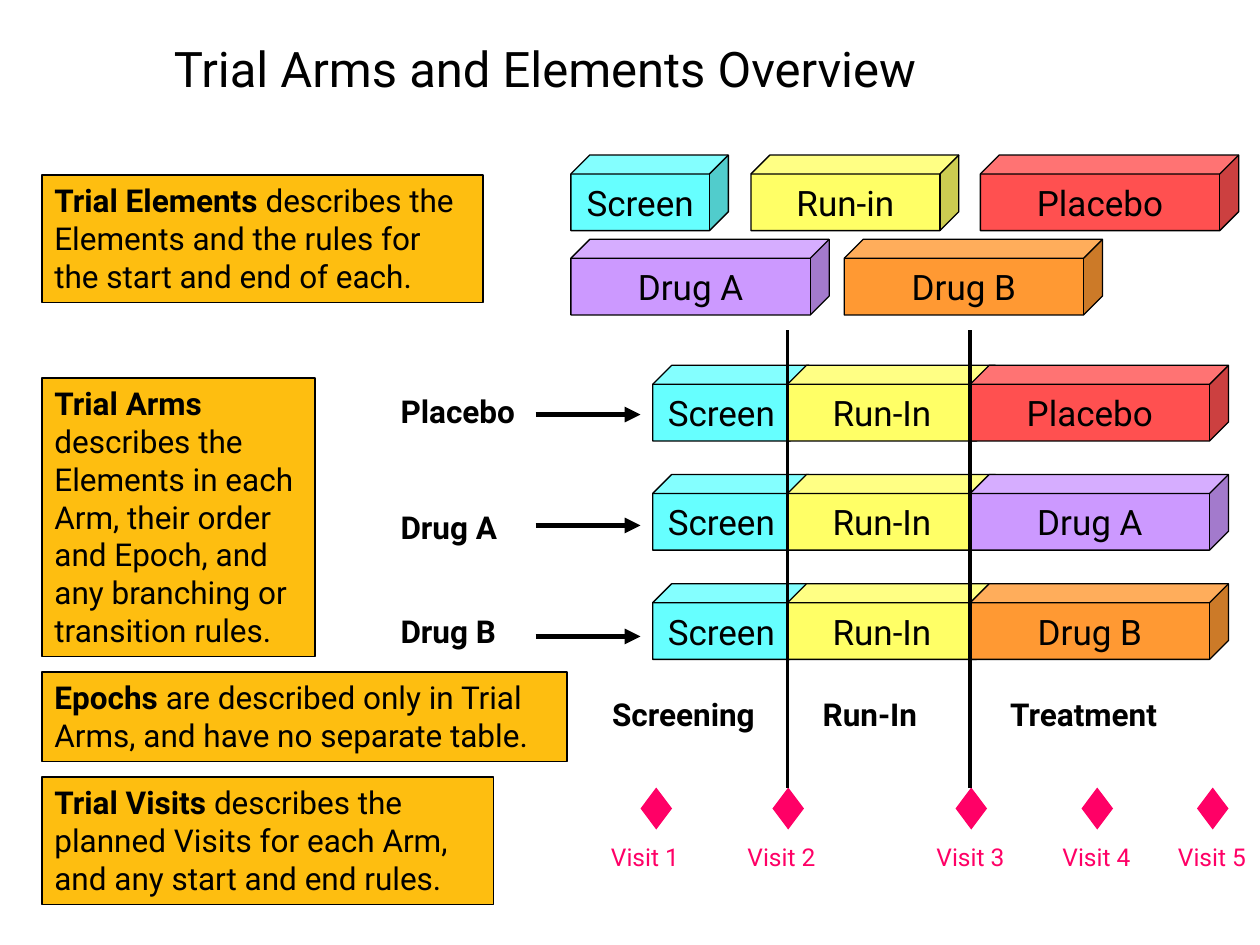
"""Builds the Trial Arms and Elements Overview slide."""
from lxml import etree
from pptx import Presentation
from pptx.dml.color import RGBColor
from pptx.enum import shapes, text
from pptx.oxml import ns
from pptx.util import Pt

BLACK = RGBColor(0x00, 0x00, 0x00)
AMBER = RGBColor(0xFE, 0xBE, 0x10)
CYAN = RGBColor(0x66, 0xFF, 0xFF)
YELLOW = RGBColor(0xFF, 0xFF, 0x66)
RED = RGBColor(0xFF, 0x50, 0x50)
PURPLE = RGBColor(0xCC, 0x99, 0xFF)
ORANGE = RGBColor(0xFF, 0x99, 0x33)
PINK = RGBColor(0xFF, 0x00, 0x66)


class Board:
    font = "Roboto"
    outline = 0.75

    def __init__(self, slide):
        self.slide = slide

    def style(self, run, size, color=BLACK, bold=False):
        run.font.name = self.font
        run.font.size = Pt(size)
        run.font.bold = bold
        run.font.color.rgb = color

    def title(self, wording, left, top, width, height):
        heading = self.slide.shapes.title
        heading.left, heading.top = Pt(left), Pt(top)
        heading.width, heading.height = Pt(width), Pt(height)
        frame = heading.text_frame
        frame.text = wording
        frame.auto_size = text.MSO_AUTO_SIZE.NONE
        frame.vertical_anchor = text.MSO_ANCHOR.MIDDLE
        frame.margin_left = frame.margin_right = 0
        frame.margin_top = frame.margin_bottom = 0
        frame.paragraphs[0].alignment = text.PP_ALIGN.LEFT
        self.style(frame.paragraphs[0].runs[0], 28)

    def solid(self, preset, left, top, width, height, fill, outlined=True):
        solid = self.slide.shapes.add_shape(
            preset, Pt(left), Pt(top), Pt(width), Pt(height))
        solid.shadow.inherit = False
        solid.fill.solid()
        solid.fill.fore_color.rgb = fill
        if outlined:
            solid.line.color.rgb = BLACK
            solid.line.width = Pt(self.outline)
        else:
            solid.line.fill.background()
        return solid

    def element(self, name, left, top, width, fill):
        cube = self.solid(shapes.MSO_SHAPE.CUBE, left, top, width, 43.2, fill)
        frame = cube.text_frame
        frame.text = name
        frame.word_wrap = False
        frame.vertical_anchor = text.MSO_ANCHOR.MIDDLE
        frame.paragraphs[0].alignment = text.PP_ALIGN.CENTER
        self.style(frame.paragraphs[0].runs[0], 20)

    def note(self, term, description, top, width, height):
        note = self.solid(shapes.MSO_SHAPE.RECTANGLE, 24, top, width, height, AMBER)
        frame = note.text_frame
        frame.word_wrap = True
        frame.vertical_anchor = text.MSO_ANCHOR.TOP
        paragraph = frame.paragraphs[0]
        paragraph.alignment = text.PP_ALIGN.LEFT
        for wording, bold in ((term, True), (description, False)):
            run = paragraph.add_run()
            run.text = wording
            self.style(run, 18, bold=bold)

    def label(self, wording, left, top, width, height=28.8, size=18,
              color=BLACK, bold=True):
        label = self.slide.shapes.add_textbox(
            Pt(left), Pt(top), Pt(width), Pt(height))
        frame = label.text_frame
        frame.text = wording
        frame.word_wrap = True
        self.style(frame.paragraphs[0].runs[0], size, color, bold)

    def line(self, x1, y1, x2, y2, weight, arrow=False):
        line = self.slide.shapes.add_connector(
            shapes.MSO_CONNECTOR.STRAIGHT, Pt(x1), Pt(y1), Pt(x2), Pt(y2))
        line.line.color.rgb = BLACK
        line.line.width = Pt(weight)
        if arrow:
            etree.SubElement(line.line._get_or_add_ln(), ns.qn("a:tailEnd"),
                             type="triangle")
        etree.SubElement(line._element.spPr, ns.qn("a:effectLst"))


def main():
    deck = Presentation()
    deck.slide_width, deck.slide_height = Pt(720), Pt(540)
    board = Board(deck.slides.add_slide(deck.slide_layouts[5]))
    board.title("Trial Arms and Elements Overview", 99.4, 23, 597, 32)

    for term, description, top, width, height in (
        ("Trial Elements ", "describes the Elements and the rules for "
         "the start and end of each.", 100, 252, 72.7),
        ("Trial Arms ", "describes the Elements in each Arm, their order "
         "and Epoch, and any branching or transition rules.", 216, 156, 159),
        ("Epochs", " are described only in Trial Arms, and have no "
         "separate table.", 384, 300, 51),
        ("Trial Visits ", "describes the planned Visits for each Arm, "
         "and any start and end rules.", 444, 258, 72.7),
    ):
        board.note(term, description, top, width, height)

    for name, left, top, width, fill in (
        ("Screen", 326.2, 88.6, 90, CYAN),
        ("Run-in", 429.1, 88.6, 118.8, YELLOW),
        ("Placebo", 560.2, 88.6, 147.6, RED),
        ("Drug A", 326.2, 136.8, 147.6, PURPLE),
        ("Drug B", 482.4, 136.8, 147.6, ORANGE),
    ):
        board.element(name, left, top, width, fill)

    run_in_start, treatment_start = 450, 554.4
    arms = (("Placebo", RED, 220.3), ("Drug A", PURPLE, 286.6),
            ("Drug B", ORANGE, 346.3))
    for row, (arm, fill, label_top) in enumerate(arms):
        top = 208.8 + 62.4 * row
        board.element("Screen", 373, top, 89.3, CYAN)
        board.element("Run-In", run_in_start, top, 118.8, YELLOW)
        board.element(arm, treatment_start, top, 147.6, fill)
        board.label(arm, 221.8, label_top, 114)
        arrow_y = 236.9 + 63.4 * row
        board.line(306, arrow_y, 366, arrow_y, 3, arrow=True)

    for epoch, left, width in (("Screening", 342.7, 101.5),
                               ("Run-In", 463, 71.3),
                               ("Treatment", 570.2, 101.5)):
        board.label(epoch, left, 393.6, width)

    visits = ((366, 342), (441.4, 420), (546, 528), (618, 600), (684, 666))
    for number, (marker_left, label_left) in enumerate(visits, 1):
        board.solid(shapes.MSO_SHAPE.DIAMOND, marker_left, 450, 18, 24, PINK,
                    outlined=False)
        board.label(f"Visit {number}", label_left, 477.4, 54, 24, 14, PINK, False)

    for boundary in (run_in_start, treatment_start):
        board.line(boundary, 188.6, boundary, 450, 2)

    deck.save("out.pptx")


if __name__ == "__main__":
    main()
